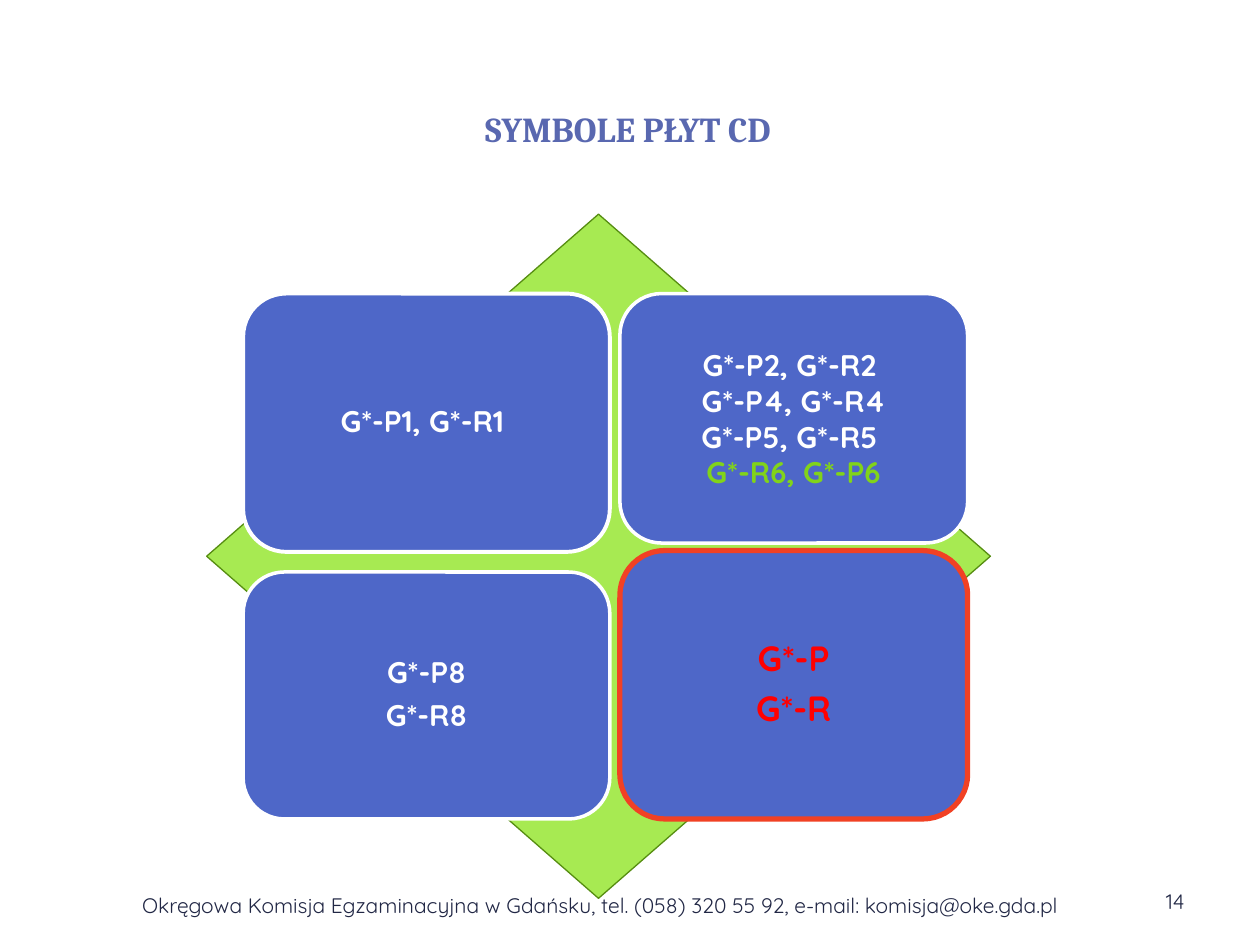
from pptx import Presentation
from pptx.dml.color import RGBColor
from pptx.enum.shapes import MSO_SHAPE as Shape
from pptx.enum.text import MSO_ANCHOR as Anchor, PP_ALIGN as Align
from pptx.util import Inches, Pt

WHITE = RGBColor(0xFF, 0xFF, 0xFF)
TITLE_BLUE = RGBColor(0x59, 0x68, 0xB0)
CARD_BLUE = RGBColor(0x4E, 0x67, 0xC8)
NAVY = RGBColor(0x21, 0x27, 0x45)
LIME = RGBColor(0xA7, 0xEA, 0x52)
DARK_GREEN = RGBColor(0x56, 0x8D, 0x11)
TEXT_GREEN = RGBColor(0x81, 0xD3, 0x1A)
ORANGE = RGBColor(0xF1, 0x41, 0x24)
RED = RGBColor(0xFF, 0x00, 0x00)

LOOSE = {"line_spacing": 0.9, "space_after": Pt(6)}
LOOSE_LARGE = {"line_spacing": 0.9, "space_after": Pt(7)}
TIGHT = {"line_spacing": 1.0, "space_after": Pt(0)}


class SlideBuilder:
    body_font = "Quicksand"
    title_font = "Cambria"

    def __init__(self, deck):
        self.page = deck.slides.add_slide(deck.slide_layouts[5])

    def fill_text(self, box, lines, font, spacing=TIGHT, align=Align.CENTER, inset=None):
        frame = box.text_frame
        frame.word_wrap = True
        frame.vertical_anchor = Anchor.MIDDLE
        if inset is not None:
            for side in ("left", "right", "top", "bottom"):
                setattr(frame, f"margin_{side}", Inches(inset))
        for index, (text, color) in enumerate(lines):
            para = frame.add_paragraph() if index else frame.paragraphs[0]
            for name, value in {"alignment": align, **spacing}.items():
                setattr(para, name, value)
            span = para.add_run()
            span.text = text
            for name, value in font.items():
                setattr(span.font, name, value)
            span.font.color.rgb = color

    def title(self, text, *bounds):
        box = self.page.shapes.title
        for name, value in zip(("left", "top", "width", "height"), bounds):
            setattr(box, name, Inches(value))
        font = {"name": self.title_font, "size": Pt(20), "bold": True}
        self.fill_text(box, [(text, TITLE_BLUE)], font)

    def label(self, text, align, *bounds):
        box = self.page.shapes.add_textbox(*map(Inches, bounds))
        font = {"name": self.body_font, "size": Pt(12)}
        self.fill_text(box, [(text, NAVY)], font, align=align)

    def shape(self, kind, fill, line, weight, *bounds):
        box = self.page.shapes.add_shape(kind, *map(Inches, bounds))
        box.shadow.inherit = False
        box.fill.solid()
        box.fill.fore_color.rgb = fill
        box.line.color.rgb = line
        box.line.width = Pt(weight)
        return box

    def card(self, bounds, lines, size=17, spacing=LOOSE, line=WHITE, weight=2):
        box = self.shape(Shape.ROUNDED_RECTANGLE, CARD_BLUE, line, weight, *bounds)
        font = {"name": self.body_font, "size": Pt(size), "bold": True}
        self.fill_text(box, lines, font, spacing, inset=0.07)


def main():
    deck = Presentation()
    deck.slide_width, deck.slide_height = Inches(10), Inches(7.5)
    slide = SlideBuilder(deck)

    slide.title("SYMBOLE PŁYT CD", 0.47, 0.45, 9.03, 1.14)
    slide.label(
        " Okręgowa Komisja Egzaminacyjna w Gdańsku, tel. (058) 320 55 92, "
        "e-mail: komisja@oke.gda.pl ",
        Align.CENTER, 0.59, 6.98, 8.35, 0.4,
    )
    slide.label("14", Align.RIGHT, 7.17, 6.95, 2.33, 0.4)
    slide.shape(Shape.DIAMOND, LIME, DARK_GREEN, 0.75, 1.64, 1.7, 6.22, 5.43)

    left, right, top, bottom = 1.93, 4.92, 2.33, 6.5
    left_width, right_width = 2.91, 2.76
    slide.card((left, top, left_width, 2.05), [("G*-P1, G*-R1 ", WHITE)], weight=2.25)
    slide.card(
        (right, top, right_width, 1.98),
        [
            ("G*-P2, G*-R2 ", WHITE),
            ("G*-P4, G*-R4", WHITE),
            ("G*-P5, G*-R5 ", WHITE),
            ("G*-R6, G*-P6", TEXT_GREEN),
        ],
        spacing=TIGHT,
    )
    slide.card(
        (left, bottom - 1.96, left_width, 1.96),
        [("G*-P8", WHITE), ("G*-R8", WHITE)],
    )
    slide.card(
        (right, bottom - 2.13, right_width, 2.13),
        [("G*-P", RED), ("G*-R", RED)],
        size=20, spacing=LOOSE_LARGE, line=ORANGE, weight=3,
    )
    deck.save("out.pptx")


if __name__ == "__main__":
    main()
